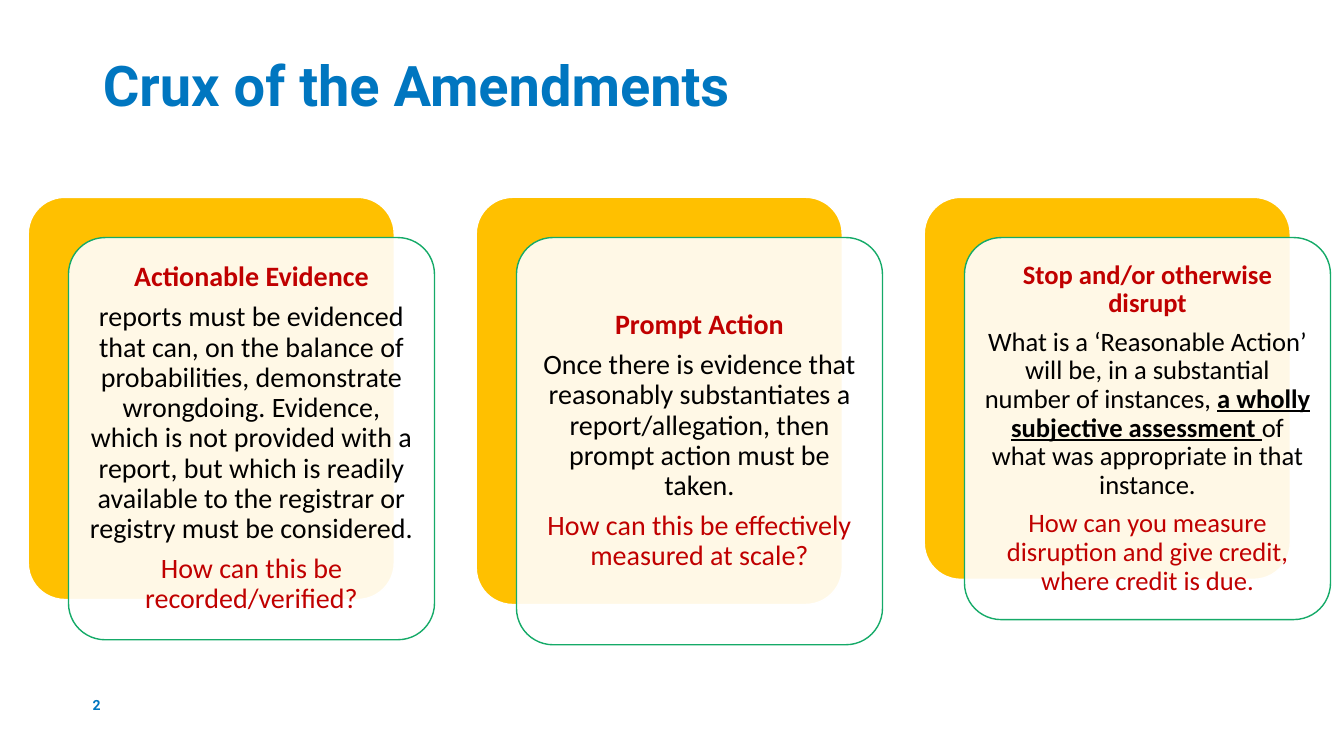
import dataclasses

import lxml.etree
import pptx
import pptx.dml.color
import pptx.enum.shapes
import pptx.enum.text
import pptx.oxml.ns
import pptx.util

ALIGN = pptx.enum.text.PP_ALIGN
ANCHOR = pptx.enum.text.MSO_ANCHOR
SLIDE_WIDTH = pptx.util.Inches(13.33)
SLIDE_HEIGHT = pptx.util.Inches(7.5)
COLUMN = SLIDE_WIDTH / 3


@dataclasses.dataclass(frozen=True)
class Theme:
    """Colours, fonts and type sizes of the deck."""
    blue: str = "0076C0"
    amber: str = "FFC000"
    green: str = "15AA68"
    red: str = "C00000"
    black: str = "000000"
    white: str = "FFFFFF"
    heading_font: str = "Roboto"
    body_font: str = "Calibri"
    title_size: int = 40
    number_size: int = 10


THEME = Theme()

AMENDMENTS = [
    {"height": 3.99, "size": 20, "heading": "Actionable Evidence",
     "body": [("reports must be evidenced that can, on the balance of probabilities, "
               "demonstrate wrongdoing. Evidence, which is not provided with a report, "
               "but which is readily available to the registrar or registry must be "
               "considered.", False)],
     "question": "How can this be recorded/verified?"},
    {"height": 4.04, "size": 20, "heading": "Prompt Action",
     "body": [("Once there is evidence that reasonably substantiates a "
               "report/allegation, then prompt action must be taken.", False)],
     "question": "How can this be effectively measured at scale?"},
    {"height": 3.79, "size": 19, "heading": "Stop and/or otherwise disrupt",
     "body": [("What is a ‘Reasonable Action’ will be, in a substantial number of "
               "instances, ", False),
              ("a wholly subjective assessment ", True),
              ("of what was appropriate in that instance.", False)],
     "question": "How can you measure disruption and give credit, where credit is due."},
]


def apply_format(target, values):
    """Set every attribute in values on target."""
    for attribute, value in values.items():
        setattr(target, attribute, value)


def rgb(colour):
    """Return the colour object for a hex string."""
    return pptx.dml.color.RGBColor.from_string(colour)


def add_text(paragraph, text, colour, **font_values):
    """Append a coloured run to a paragraph."""
    run = paragraph.add_run()
    run.text = text
    apply_format(run.font, font_values)
    run.font.color.rgb = rgb(colour)


def frame_format(anchor, left, top, right, bottom):
    """Return text frame settings with margins in inches."""
    margins = zip(("left", "top", "right", "bottom"), (left, top, right, bottom))
    values = {f"margin_{side}": pptx.util.Inches(inset) for side, inset in margins}
    return {"word_wrap": True, "auto_size": pptx.enum.text.MSO_AUTO_SIZE.NONE,
            "vertical_anchor": anchor, **values}


def place_title(slide, left, top, width, height):
    """Fill the title placeholder inside its box."""
    title = slide.shapes.title
    apply_format(title, {"left": left, "top": top, "width": width, "height": height})
    apply_format(title.text_frame, frame_format(ANCHOR.BOTTOM, 0.1, 0.05, 0.1, 0.05))
    paragraph = title.text_frame.paragraphs[0]
    apply_format(paragraph, {"alignment": ALIGN.LEFT, "line_spacing": 0.9})
    add_text(paragraph, "Crux of the Amendments", THEME.blue, bold=True,
             name=THEME.heading_font, size=pptx.util.Pt(THEME.title_size))


def place_page_number(slide, left, top, width, height):
    """Write the page number inside its box."""
    number = slide.shapes.add_textbox(left, top, width, height).text_frame
    apply_format(number, frame_format(ANCHOR.MIDDLE, 0, 0.05, 0.1, 0.05))
    add_text(number.paragraphs[0], "2", THEME.blue, bold=True,
             name=THEME.heading_font, size=pptx.util.Pt(THEME.number_size))


def add_card(slide, left, top, width, height, fill, line, opacity=100):
    """Draw one rounded card with a thin outline."""
    card = slide.shapes.add_shape(
        pptx.enum.shapes.MSO_SHAPE.ROUNDED_RECTANGLE, left, top, width, height)
    card.adjustments[0] = 0.1
    card.shadow.inherit = False
    card.fill.solid()
    card.fill.fore_color.rgb = rgb(fill)
    card.line.color.rgb = rgb(line)
    card.line.width = pptx.util.Pt(1)
    if opacity < 100:
        colour = card.fill._xPr.find(".//" + pptx.oxml.ns.qn("a:srgbClr"))
        lxml.etree.SubElement(colour, pptx.oxml.ns.qn("a:alpha"), val=str(opacity * 1000))


def place_amendment(slide, amendment, left, top, width, height):
    """Stack two offset cards and the amendment text in a box."""
    shift = int(width * 0.11)
    inset = int(width * 0.03)
    front_left, front_top = left + shift, top + shift
    add_card(slide, left, top, width, height, THEME.amber, THEME.white)
    add_card(slide, front_left, front_top, width, height, THEME.white, THEME.green, 90)
    frame = slide.shapes.add_textbox(front_left + inset, front_top + inset,
                                     width - 2 * inset, height - 2 * inset).text_frame
    apply_format(frame, frame_format(ANCHOR.MIDDLE, 0.08, 0.08, 0.08, 0.08))
    font_values = {"name": THEME.body_font, "size": pptx.util.Pt(amendment["size"])}
    heading, body, question = frame.paragraphs[0], frame.add_paragraph(), frame.add_paragraph()
    for paragraph in (heading, body, question):
        apply_format(paragraph, {"alignment": ALIGN.CENTER, "line_spacing": 0.9,
                                 "space_after": pptx.util.Pt(0.35 * amendment["size"])})
    add_text(heading, amendment["heading"], THEME.red, bold=True, **font_values)
    for words, stressed in amendment["body"]:
        add_text(body, words, THEME.black, bold=stressed, underline=stressed, **font_values)
    add_text(question, amendment["question"], THEME.red, **font_values)


def build_amendments_slide(presentation):
    """Lay out the title, three amendment columns and page number."""
    slide = presentation.slides.add_slide(presentation.slide_layouts[5])
    margin = int(SLIDE_WIDTH * 0.069)
    place_title(slide, margin, int(SLIDE_HEIGHT * 0.053),
                int(SLIDE_WIDTH * 0.884), int(SLIDE_HEIGHT * 0.11))
    place_page_number(slide, margin, int(SLIDE_HEIGHT * 0.916),
                      int(SLIDE_WIDTH * 0.225), int(SLIDE_HEIGHT * 0.032))
    for column, amendment in enumerate(AMENDMENTS):
        place_amendment(slide, amendment, int(COLUMN * (column + 0.063)),
                        int(SLIDE_HEIGHT * 0.261), int(COLUMN * 0.817),
                        pptx.util.Inches(amendment["height"]))


def main():
    """Build and save the presentation."""
    presentation = pptx.Presentation()
    apply_format(presentation, {"slide_width": SLIDE_WIDTH, "slide_height": SLIDE_HEIGHT})
    build_amendments_slide(presentation)
    presentation.save("out.pptx")


if __name__ == "__main__":
    main()
